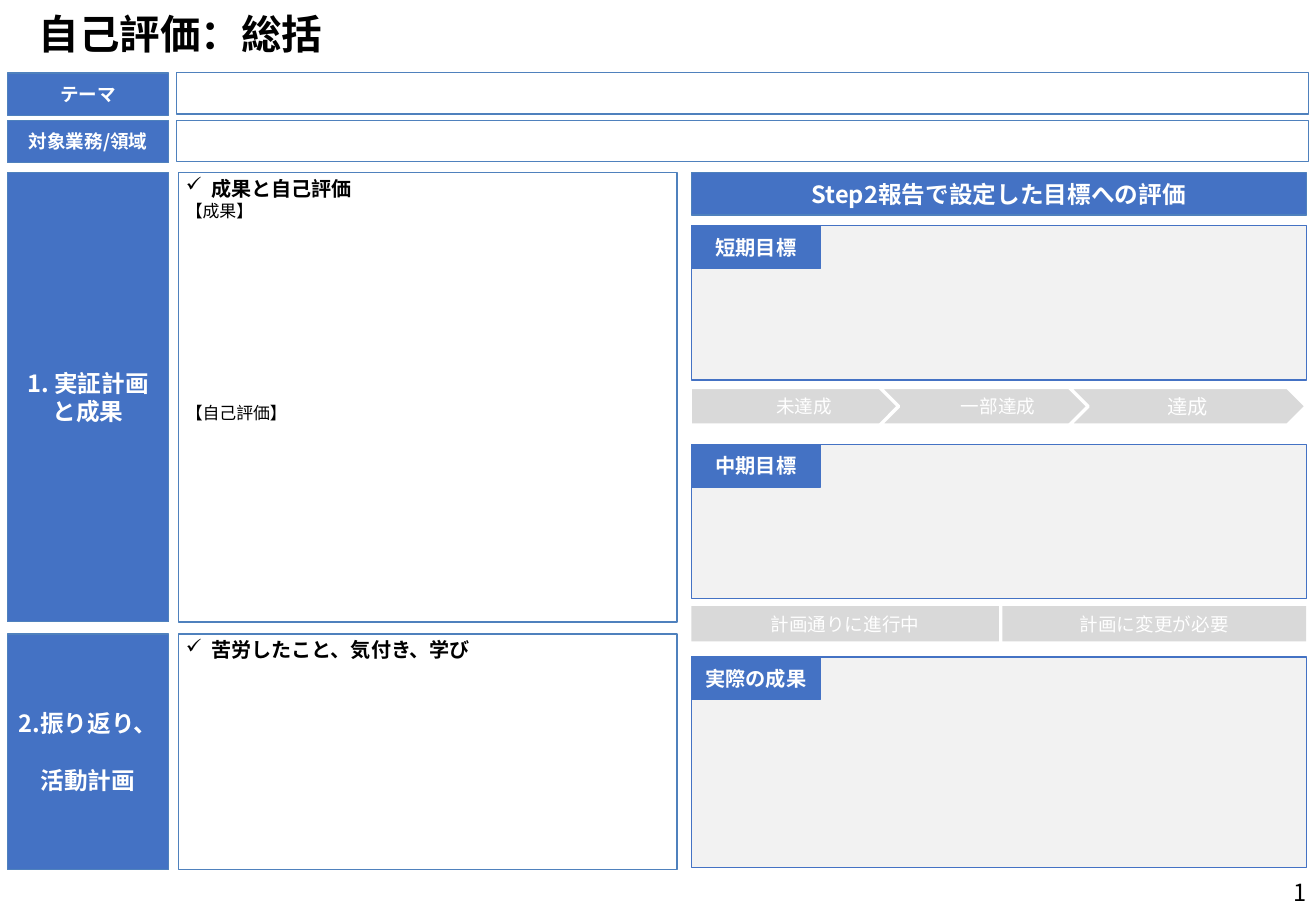
"""Builds the self-evaluation summary slide."""
from lxml.etree import SubElement
from pptx import Presentation
from pptx.dml.color import RGBColor
from pptx.enum.shapes import MSO_SHAPE as Kind
from pptx.enum.text import MSO_ANCHOR as Anchor, MSO_AUTO_SIZE as Fit, PP_ALIGN as Align
from pptx.oxml.ns import qn
from pptx.util import Emu, Pt

PX = 9144
FONT = "Noto Sans CJK JP"
WHITE = RGBColor(0xFF, 0xFF, 0xFF)
BLACK = RGBColor(0, 0, 0)
BLUE = RGBColor(0x44, 0x72, 0xC4)
EDGE = RGBColor(0x4F, 0x81, 0xBD)
PALE = RGBColor(0xF2, 0xF2, 0xF2)
GRAY = RGBColor(0xD9, 0xD9, 0xD9)


def put(para, text, size, color=WHITE, bold=False, align=Align.CENTER):
    para.alignment = align
    para.line_spacing = Pt(round(size * 1.2, 1))
    run = para.add_run()
    run.text = text
    font = run.font
    font.size, font.bold, font.name = Pt(size), bold, FONT
    font.color.rgb = color
    SubElement(font._element, qn("a:ea"), typeface=FONT)


def box(x, y, w, h, fill, line=None, weight=0.75, kind=Kind.RECTANGLE):
    shape = slide.shapes.add_shape(kind, *[Emu(n * PX) for n in (x, y, w, h)])
    shape.shadow.inherit = False
    shape.fill.solid()
    shape.fill.fore_color.rgb = fill
    if line is None:
        shape.line.fill.background()
    else:
        shape.line.color.rgb = line
        shape.line.width = Pt(weight)
    frame = shape.text_frame
    frame.word_wrap = True
    frame.vertical_anchor = Anchor.MIDDLE
    frame.margin_left = frame.margin_right = 0
    frame.margin_top = frame.margin_bottom = 0
    return frame


deck = Presentation()
deck.slide_width, deck.slide_height = Emu(1083 * PX), Emu(750 * PX)
slide = deck.slides.add_slide(deck.slide_layouts[5])

title = slide.shapes.title
title.left, title.top = Emu(22 * PX), Emu(2 * PX)
title.width, title.height = Emu(1040 * PX), Emu(50 * PX)
title.text_frame.auto_size = Fit.NONE
title.text_frame.vertical_anchor = Anchor.MIDDLE
put(title.text_frame.paragraphs[0], "自己評価：総括", 24, BLACK, True, Align.LEFT)

for y, name in ((60, "テーマ"), (99, "対象業務/領域")):
    label = box(6, y, 133, 35, BLUE, EDGE)
    put(label.paragraphs[0], name, 11, bold=True)
    box(145, y, 932, 34, WHITE, EDGE)

PARTS = (
    (142, 370, ("1. 実証計画", "と成果"), 0, "成果と自己評価",
     (("【成果】", 0), ("【自己評価】", 108))),
    (522, 194, ("2.振り返り、", "活動計画"), 17, "苦労したこと、気付き、学び", ()),
)
for y, h, names, gap, head, notes in PARTS:
    label = box(6, y, 133, h, BLUE, EDGE)
    put(label.paragraphs[0], names[0], 14, bold=True)
    last = label.add_paragraph()
    last.space_before = Pt(gap)
    put(last, names[1], 14, bold=True)

    body = box(147, y, 410, h, WHITE, EDGE, 1)
    body.vertical_anchor = Anchor.TOP
    body.margin_left = body.margin_right = Emu(6 * PX)
    body.margin_top = body.margin_bottom = Emu(3 * PX)
    para = body.paragraphs[0]
    put(para, head, 11.9, BLACK, True, Align.LEFT)
    props = para._p.get_or_add_pPr()
    props.set("marL", str(21 * PX))
    props.set("indent", str(-21 * PX))
    SubElement(props, qn("a:buChar"), char="✓")
    for note, gap in notes:
        para = body.add_paragraph()
        para.space_before = Pt(gap)
        put(para, note, 10, BLACK, align=Align.LEFT)

banner = box(569, 142, 506, 35, BLUE, EDGE)
put(banner.paragraphs[0], "Step2報告で設定した目標への評価", 14, bold=True)

for y, h, name in ((186, 127, "短期目標"), (366, 127, "中期目標"), (541, 173, "実際の成果")):
    box(569, y, 506, h, PALE, BLUE)
    tab = box(569, y, 106, 35, BLUE, BLUE)
    put(tab.paragraphs[0], name, 12, bold=True)

STEPS = (("未達成", 11, Kind.PENTAGON), ("一部達成", 11, Kind.CHEVRON), ("達成", 12, Kind.CHEVRON))
for i, (name, size, kind) in enumerate(STEPS):
    step = box(568 + 156 * i, 319, 195, 31, GRAY, WHITE, 2, kind)
    put(step.paragraphs[0], name, size)

for x, w, name in ((569, 253, "計画通りに進行中"), (825, 250, "計画に変更が必要")):
    bar = box(x, 499, w, 29, GRAY)
    put(bar.paragraphs[0], name, 11)

page = slide.shapes.add_textbox(*[Emu(n * PX) for n in (832, 714, 253, 40)]).text_frame
page.word_wrap = True
page.vertical_anchor = Anchor.MIDDLE
put(page.paragraphs[0], "1", 14, BLACK, align=Align.RIGHT)

deck.save("out.pptx")
